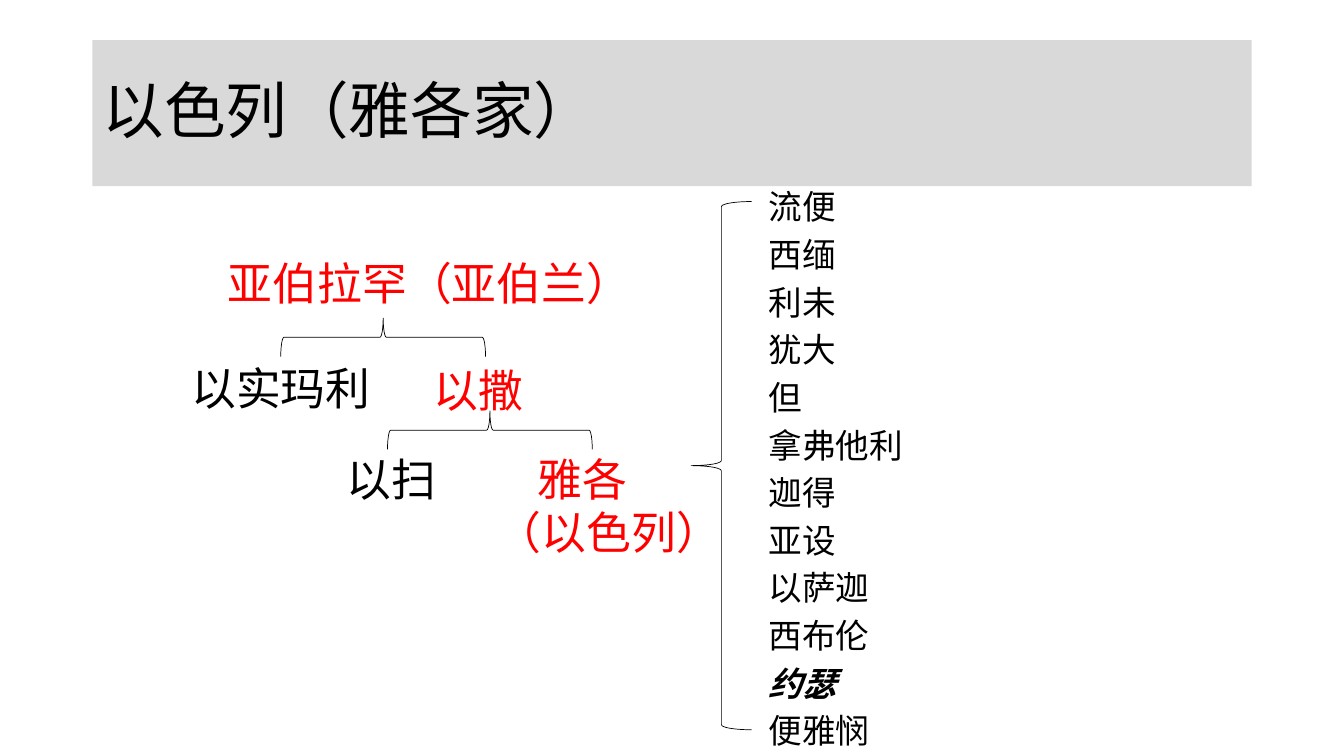
from lxml.etree import SubElement
from pptx import Presentation
from pptx.dml.color import RGBColor
from pptx.enum.shapes import MSO_SHAPE as Shape
from pptx.enum.text import MSO_ANCHOR as Anchor, MSO_AUTO_SIZE as AutoSize, PP_ALIGN as Align
from pptx.oxml.ns import qn
from pptx.util import Cm, Pt

FONT = "Noto Sans CJK SC"
BLACK, RED, GREY = "000000", "FF0000", "D9D9D9"


def color(hex_string):
    return RGBColor.from_string(hex_string)


def write(shape, text, size, text_color, wrap=False):
    """Fill a shape with left-aligned text and return its paragraphs."""
    frame = shape.text_frame
    frame.text = text
    frame.word_wrap = wrap
    frame.auto_size = AutoSize.NONE if wrap else AutoSize.SHAPE_TO_FIT_TEXT
    for paragraph in frame.paragraphs:
        paragraph.alignment = Align.LEFT
        font = paragraph.font
        font.name, font.size = FONT, Pt(size)
        font.color.rgb = color(text_color)
        # East Asian typeface
        properties = paragraph._p.pPr.find(qn("a:defRPr"))
        SubElement(properties, qn("a:ea")).set("typeface", FONT)
    return frame.paragraphs


presentation = Presentation()
presentation.slide_width, presentation.slide_height = Cm(33.87), Cm(19.05)
slide = presentation.slides.add_slide(presentation.slide_layouts[1])
shapes = slide.shapes

# Title bar
title = shapes.title
title.left, title.top, title.width, title.height = Cm(2.33), Cm(1.01), Cm(29.21), Cm(3.68)
title.fill.solid()
title.fill.fore_color.rgb = color(GREY)
title.text_frame.vertical_anchor = Anchor.MIDDLE
write(title, "以色列（雅各家）", 44, BLACK, wrap=True)[0].line_spacing = 0.9

# Abraham, the head of the family tree
head = slide.placeholders[1]
head.left, head.top, head.width, head.height = Cm(5.49), Cm(6.48), Cm(10.77), Cm(1.5)
paragraph = write(head, "亚伯拉罕（亚伯兰）", 32, RED)[0]
paragraph.line_spacing, paragraph.space_before = 0.9, Pt(10)
paragraph_properties = paragraph._p.pPr
paragraph_properties.set("marL", "0")
paragraph_properties.set("indent", "0")
bullet_none = paragraph_properties.makeelement(qn("a:buNone"))
paragraph_properties.find(qn("a:defRPr")).addprevious(bullet_none)

# Descendants: left, top, width, height, text, colour
descendants = [
    (4.57, 8.97, 5.08, 1.62, "以实玛利", BLACK),
    (10.67, 9.02, 2.79, 1.62, "以撒", RED),
    (8.48, 11.25, 2.79, 1.62, "以扫", BLACK),
    (12.27, 11.25, 6.22, 3.0, "雅各\n（以色列）", RED),
]
for left, top, width, height, text, text_color in descendants:
    box = shapes.add_textbox(Cm(left), Cm(top), Cm(width), Cm(height))
    paragraphs = write(box, text, 32, text_color)
    if len(paragraphs) > 1:
        paragraphs[0]._p.pPr.set("marL", str(Cm(1.02)))

# Braces: left, top, width, height, rotation
braces = [
    (17.42, 5.08, 1.52, 13.31, 0),
    (9.17, 5.92, 0.97, 5.16, 90),
    (11.86, 8.26, 0.97, 5.16, 90),
]
for left, top, width, height, rotation in braces:
    brace = shapes.add_shape(Shape.LEFT_BRACE, Cm(left), Cm(top), Cm(width), Cm(height))
    brace.rotation = rotation
    brace.shadow.inherit = False
    brace.fill.background()
    brace.line.color.rgb = color(BLACK)
    brace.line.width = Pt(0.5)

# Twelve sons of Jacob, evenly spaced
sons = ["流便", "西缅", "利未", "犹大", "但", "拿弗他利",
        "迦得", "亚设", "以萨迦", "西布伦", "约瑟", "便雅悯"]
for index, son in enumerate(sons):
    width = 0.51 + 0.86 * len(son)
    box = shapes.add_textbox(Cm(19.12), Cm(4.57 + 1.2 * index), Cm(width), Cm(1.28))
    paragraph = write(box, son, 24, BLACK)[0]
    if son == "约瑟":
        paragraph.font.bold = paragraph.font.italic = True

presentation.save("out.pptx")
